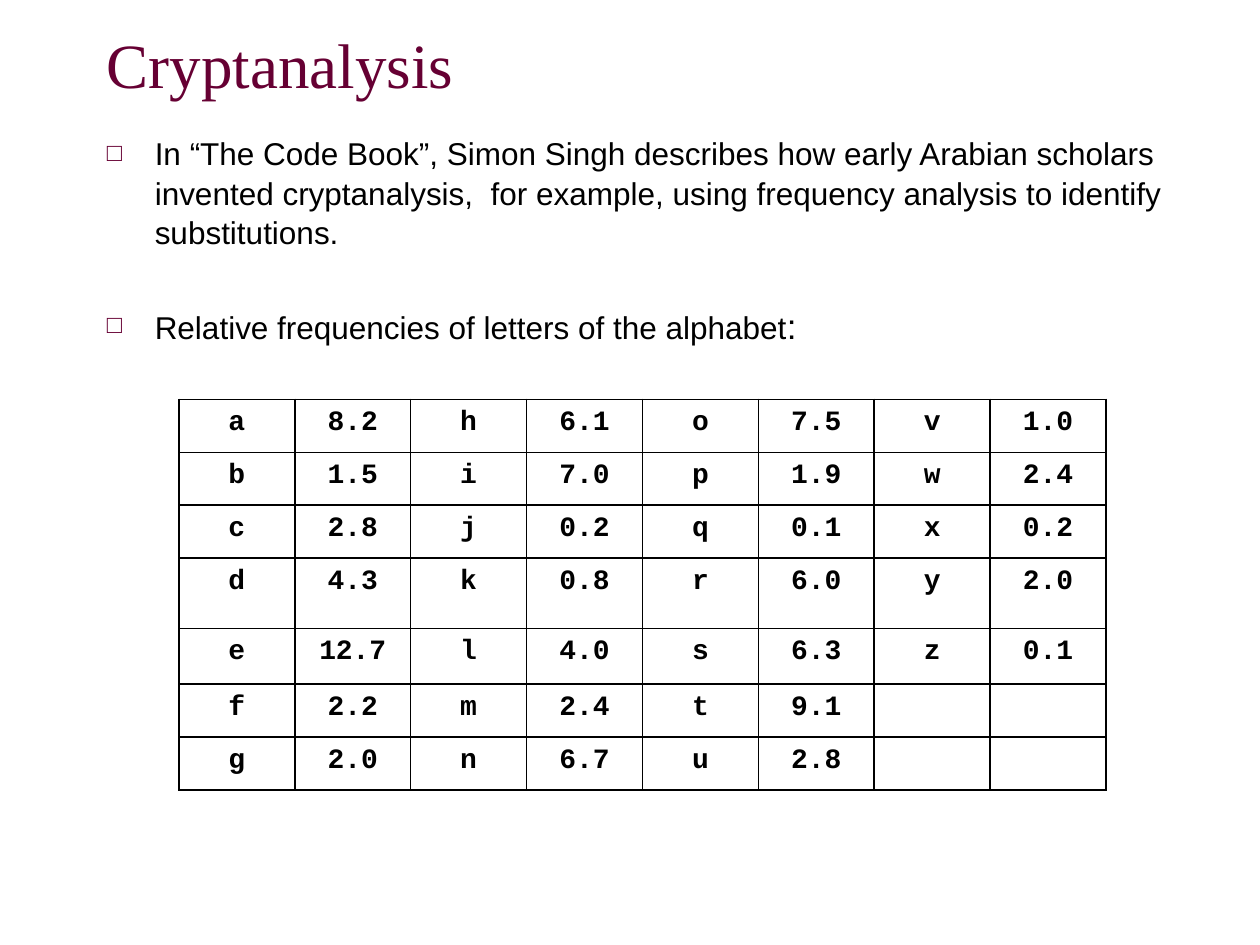
from lxml import etree
from pptx import Presentation
from pptx.dml.color import RGBColor
from pptx.enum.text import MSO_ANCHOR, PP_ALIGN
from pptx.oxml.ns import qn
from pptx.util import Inches, Pt

MIDDLE = MSO_ANCHOR.MIDDLE
CENTER = PP_ALIGN.CENTER
BLANK_LAYOUT = 6

COLORS = {"title": "660033", "text": "000000", "border": "000000"}
LINE_SPACING = 1.05
COLUMN_WIDTH = 0.92
ROW_HEIGHTS = [0.42, 0.42, 0.42, 0.56, 0.44, 0.42, 0.42]

# Relative frequency of each letter in percent, a to z
FREQUENCIES = [
    ("a", "8.2"), ("b", "1.5"), ("c", "2.8"), ("d", "4.3"), ("e", "12.7"),
    ("f", "2.2"), ("g", "2.0"), ("h", "6.1"), ("i", "7.0"), ("j", "0.2"),
    ("k", "0.8"), ("l", "4.0"), ("m", "2.4"), ("n", "6.7"), ("o", "7.5"),
    ("p", "1.9"), ("q", "0.1"), ("r", "6.0"), ("s", "6.3"), ("t", "9.1"),
    ("u", "2.8"), ("v", "1.0"), ("w", "2.4"), ("x", "0.2"), ("y", "2.0"),
    ("z", "0.1"),
]

BULLETS = [
    [("In “The Code Book”, Simon Singh describes how early Arabian scholars "
      "invented cryptanalysis,  for example, using frequency analysis to "
      "identify substitutions.", 18)],
    [("Relative frequencies of letters of the alphabet", 18), (":", 20)],
]


def style_font(font, name, size, color, bold=False):
    font.name = name
    font.size = Pt(size)
    font.bold = bold
    font.color.rgb = RGBColor.from_string(color)


def add_text_frame(page, left, top, width, height):
    box = page.shapes.add_textbox(
        Inches(left), Inches(top), Inches(width), Inches(height))
    box.text_frame.word_wrap = True
    return box.text_frame


def add_title(page, text):
    frame = add_text_frame(page, 0.75, 0, 8.5, 1)
    frame.vertical_anchor = MIDDLE
    paragraph = frame.paragraphs[0]
    paragraph.text = text
    style_font(paragraph.font, "Times New Roman", 36, COLORS["title"])


def add_bullet_mark(paragraph):
    properties = paragraph._p.get_or_add_pPr()
    properties.set("marL", str(Inches(0.38)))
    properties.set("indent", str(Inches(-0.38)))
    color = etree.SubElement(properties, qn("a:buClr"))
    etree.SubElement(color, qn("a:srgbClr"), val=COLORS["title"])
    etree.SubElement(properties, qn("a:buSzPct"), val="80000")
    etree.SubElement(properties, qn("a:buFont"), typeface="Arial")
    etree.SubElement(properties, qn("a:buChar"), char="□")


def add_bullets(page, bullets):
    frame = add_text_frame(page, 0.75, 1, 8.58, 5.67)
    for index, spans in enumerate(bullets):
        paragraph = frame.add_paragraph() if index else frame.paragraphs[0]
        paragraph.line_spacing = LINE_SPACING
        if index:
            paragraph.space_before = Pt(29)
        add_bullet_mark(paragraph)
        for text, size in spans:
            span = paragraph.add_run()
            span.text = text
            style_font(span.font, "Arial", size, COLORS["text"])


def add_borders(cell):
    properties = cell._tc.get_or_add_tcPr()
    for side in ("lnL", "lnR", "lnT", "lnB"):
        line = etree.SubElement(properties, qn(f"a:{side}"), w=str(Pt(1)))
        fill = etree.SubElement(line, qn("a:solidFill"))
        etree.SubElement(fill, qn("a:srgbClr"), val=COLORS["border"])


def fill_cell(cell, text):
    add_borders(cell)
    cell.fill.background()
    paragraph = cell.text_frame.paragraphs[0]
    paragraph.text = text
    paragraph.alignment = CENTER
    paragraph.line_spacing = LINE_SPACING
    style_font(paragraph.font, "Courier New", 16, COLORS["text"], bold=True)


def add_frequency_table(page, frequencies):
    row_count = len(ROW_HEIGHTS)
    pair_count = -(-len(frequencies) // row_count)
    column_count = 2 * pair_count
    table = page.shapes.add_table(
        row_count, column_count, Inches(1.42), Inches(3.17),
        Inches(COLUMN_WIDTH * column_count), Inches(sum(ROW_HEIGHTS))).table
    table.first_row = table.horz_banding = False
    for column in table.columns:
        column.width = Inches(COLUMN_WIDTH)
    for row, height in zip(table.rows, ROW_HEIGHTS):
        row.height = Inches(height)

    # Letters run down each pair of columns; the last pair is padded
    padding = [("", "")] * (row_count * pair_count - len(frequencies))
    for index, entry in enumerate(frequencies + padding):
        pair, row = divmod(index, row_count)
        for offset, text in enumerate(entry):
            fill_cell(table.cell(row, 2 * pair + offset), text)


def main():
    deck = Presentation()
    deck.slide_width = Inches(10)
    deck.slide_height = Inches(7.5)
    page = deck.slides.add_slide(deck.slide_layouts[BLANK_LAYOUT])

    add_title(page, "Cryptanalysis")
    add_bullets(page, BULLETS)
    add_frequency_table(page, FREQUENCIES)

    deck.save("out.pptx")


if __name__ == "__main__":
    main()
